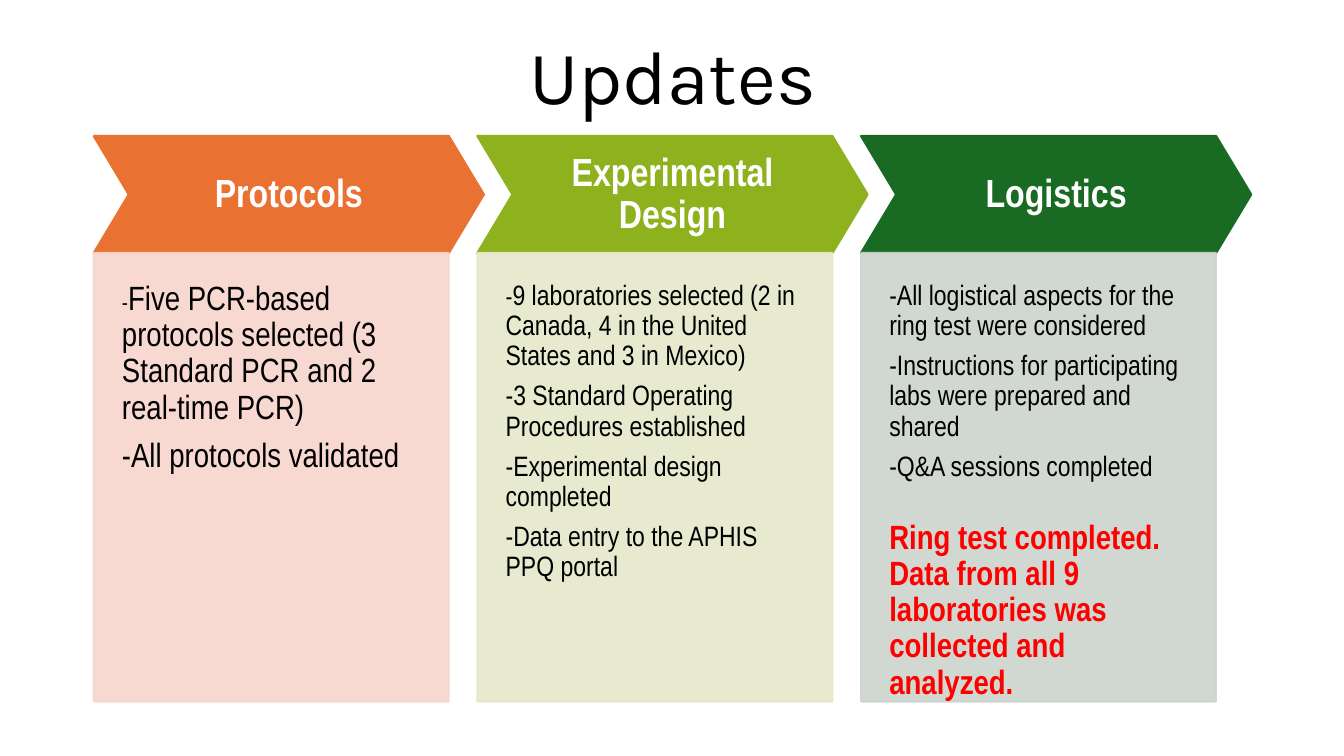
from dataclasses import dataclass

from lxml import etree
from pptx import Presentation, util as u
from pptx.dml.color import RGBColor
from pptx.enum import shapes, text
from pptx.oxml.ns import qn

INCH = u.Inches
LEFT, TOP, STEP = 0.93, 1.35, 3.805
HEAD_W, HEAD_H = 3.87, 1.16
BODY_W, BODY_H = 3.52, 4.45


@dataclass
class Run:
    words: str
    size: int = 20
    color: str = "000000"
    bold: bool = False


@dataclass
class Para:
    runs: list[Run]
    before: int = 0


@dataclass
class Column:
    head: str
    dark: str
    pale: str
    paras: list[Para]


COLUMNS = [
    Column("Protocols", "E97132", "F7D5CE", [
        Para([Run("-", 16),
              Run("Five PCR-based protocols selected (3 Standard PCR and 2 real-time PCR)", 24)]),
        Para([Run("-All protocols validated", 24)]),
    ]),
    Column("Experimental Design", "8EB21E", "E5E8CA", [
        Para([Run("-", 18),
              Run("9 laboratories selected (2 in Canada, 4 in the United States and 3 in Mexico)")]),
        Para([Run("-3 Standard Operating Procedures established")]),
        Para([Run("-Experimental design completed")]),
        Para([Run("-Data entry to the APHIS PPQ portal")]),
    ]),
    Column("Logistics", "196B24", "CCD4CD", [
        Para([Run("-All logistical aspects for the ring test were considered")]),
        Para([Run("-Instructions for participating labs were prepared and shared")]),
        Para([Run("-Q&A sessions completed")]),
        Para([Run("Ring test completed. Data from all 9 laboratories was collected and analyzed.",
                  24, "FF0000", True)], before=20),
    ]),
]


def rgb(code: str) -> RGBColor:
    return RGBColor.from_string(code)


def write(para, words: str, *, size: int, color: str = "000000",
          bold: bool = False, font: str = "Arial Narrow") -> None:
    """Add one formatted run to a paragraph."""
    run = para.add_run()
    run.text = words
    run.font.name = font
    run.font.size = u.Pt(size)
    run.font.bold = bold
    run.font.color.rgb = rgb(color)


def space(para, align, after: float = 0, before: float = 0) -> None:
    para.alignment = align
    para.line_spacing = 0.9
    para.space_before = u.Pt(before)
    para.space_after = u.Pt(after)


def block(slide, kind, left: float, top: float, width: float, height: float,
          color: str, pad: float, foot: float, anchor):
    """Draw a filled shape with its text margins set."""
    shape = slide.shapes.add_shape(kind, INCH(left), INCH(top), INCH(width), INCH(height))
    shape.shadow.inherit = False
    shape.fill.solid()
    shape.fill.fore_color.rgb = rgb(color)
    shape.line.color.rgb = rgb(color)
    shape.line.width = u.Pt(1.5)
    frame = shape.text_frame
    frame.word_wrap = True
    frame.vertical_anchor = anchor
    frame.margin_left = frame.margin_right = frame.margin_top = INCH(pad)
    frame.margin_bottom = INCH(foot)
    return shape


def fade(shape, percent: int) -> None:
    """Set the opacity of a shape's fill and line."""
    for color in shape.element.spPr.iter(qn("a:srgbClr")):
        etree.SubElement(color, qn("a:alpha"), val=str(percent * 1000))


def draw(slide, col: Column, left: float) -> None:
    # Chevron heading
    head = block(slide, shapes.MSO_SHAPE.CHEVRON, left, TOP, HEAD_W, HEAD_H,
                 col.dark, 0.14, 0.14, text.MSO_ANCHOR.MIDDLE)
    head.adjustments[0] = 0.3
    line = head.text_frame.paragraphs[0]
    space(line, text.PP_ALIGN.CENTER)
    write(line, col.head, size=28, color="FFFFFF", bold=True)

    # Panel with the points
    body = block(slide, shapes.MSO_SHAPE.RECTANGLE, left, TOP + HEAD_H, BODY_W, BODY_H,
                 col.pale, 0.28, 0.56, text.MSO_ANCHOR.TOP)
    fade(body, 90)
    frame = body.text_frame
    for i, item in enumerate(col.paras):
        line = frame.add_paragraph() if i else frame.paragraphs[0]
        after = 0.35 * max(run.size for run in item.runs)
        space(line, text.PP_ALIGN.LEFT, after, item.before)
        for run in item.runs:
            write(line, run.words, size=run.size, color=run.color, bold=run.bold)


def main() -> None:
    deck = Presentation()
    deck.slide_width, deck.slide_height = INCH(13.33), INCH(7.5)
    slide = deck.slides.add_slide(deck.slide_layouts[5])

    # Title
    title = slide.shapes.title
    title.left, title.top = INCH(0.92), INCH(0.07)
    title.width, title.height = INCH(11.5), INCH(1.45)
    title.text_frame.vertical_anchor = text.MSO_ANCHOR.MIDDLE
    line = title.text_frame.paragraphs[0]
    space(line, text.PP_ALIGN.CENTER)
    write(line, "Updates", size=54, font="Karla")

    # Columns
    for i, col in enumerate(COLUMNS):
        draw(slide, col, LEFT + i * STEP)

    deck.save("out.pptx")


if __name__ == "__main__":
    main()
